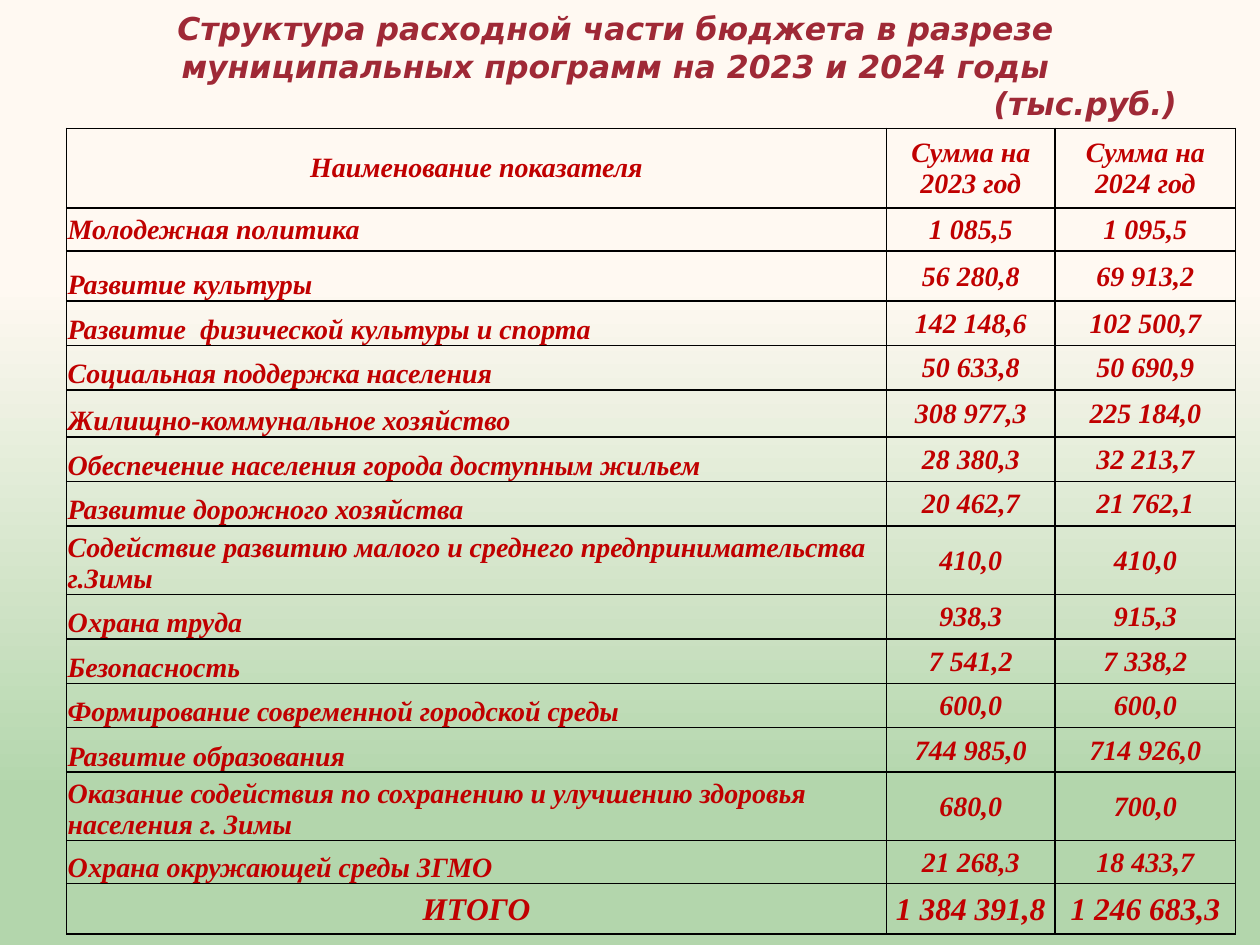
"""Build the slide with municipal programme spending for 2023 and 2024."""
from lxml.etree import SubElement
from pptx import Presentation
from pptx.dml.color import RGBColor
from pptx.enum.text import MSO_ANCHOR, PP_ALIGN
from pptx.oxml.ns import qn
from pptx.util import Pt

TITLE_COLOR = RGBColor(0x9F, 0x29, 0x36)
TABLE_COLOR = RGBColor(0xC0, 0x00, 0x00)
BORDER_COLOR = RGBColor(0x00, 0x00, 0x00)
GRADIENT = [(0.30, RGBColor(0xFF, 0xF9, 0xF2)), (0.84, RGBColor(0xB3, 0xD6, 0xAC))]

TITLE = [
    ("Структура расходной части бюджета в разрезе муниципальных программ на 2023 и 2024 годы",
     PP_ALIGN.CENTER),
    ("(тыс.руб.)", PP_ALIGN.RIGHT),
]
COLUMN_WIDTHS = [468.5, 96.5, 103]
ROWS = [
    (42.8, "Наименование показателя", "Сумма на 2023 год", "Сумма на 2024 год"),
    (24.6, "Молодежная политика", "1 085,5", "1 095,5"),
    (28.5, "Развитие культуры", "56 280,8", "69 913,2"),
    (25.4, "Развитие  физической культуры и спорта", "142 148,6", "102 500,7"),
    (25.4, "Социальная поддержка населения", "50 633,8", "50 690,9"),
    (27, "Жилищно-коммунальное хозяйство", "308 977,3", "225 184,0"),
    (25.4, "Обеспечение населения города доступным жильем", "28 380,3", "32 213,7"),
    (25.4, "Развитие дорожного хозяйства", "20 462,7", "21 762,1"),
    (36.3, "Содействие развитию малого и среднего предпринимательства г.Зимы", "410,0", "410,0"),
    (25.4, "Охрана труда", "938,3", "915,3"),
    (25.4, "Безопасность", "7 541,2", "7 338,2"),
    (25.4, "Формирование современной городской среды", "600,0", "600,0"),
    (25.4, "Развитие образования", "744 985,0", "714 926,0"),
    (36.3, "Оказание содействия по сохранению и улучшению здоровья населения г. Зимы",
     "680,0", "700,0"),
    (24.6, "Охрана окружающей среды ЗГМО", "21 268,3", "18 433,7"),
    (28.6, "ИТОГО", "1 384 391,8", "1 246 683,3"),
]
LAST_ROW = len(ROWS) - 1


def format_runs(para, font_name, size, color):
    for span in para.runs:
        font = span.font
        font.name, font.size = font_name, Pt(size)
        font.bold = font.italic = True
        font.color.rgb = color


def add_borders(cell):
    properties = cell._tc.get_or_add_tcPr()
    for side in ("lnL", "lnR", "lnT", "lnB"):
        line = SubElement(properties, qn(f"a:{side}"), w=str(Pt(1)))
        fill = SubElement(line, qn("a:solidFill"))
        SubElement(fill, qn("a:srgbClr"), val=str(BORDER_COLOR))


def paint_background(page):
    fill = page.background.fill
    fill.gradient()
    fill.gradient_angle = 270
    for stop, (position, color) in zip(fill.gradient_stops, GRADIENT):
        stop.position = position
        stop.color.rgb = color


def add_title(page):
    box = page.shapes.add_textbox(Pt(17.3), Pt(29.5), Pt(668.9), Pt(43.9))
    frame = box.text_frame
    frame.word_wrap = True
    frame.vertical_anchor = MSO_ANCHOR.BOTTOM
    frame.margin_left = frame.margin_right = Pt(13.7)
    frame.text = "\n".join(text for text, _ in TITLE)
    for para, (_, alignment) in zip(frame.paragraphs, TITLE):
        para.alignment = alignment
        format_runs(para, "DejaVu Sans", 18, TITLE_COLOR)


def fill_cell(cell, text, row, column):
    cell.text_frame.text = text
    para = cell.text_frame.paragraphs[0]
    is_name = column == 0 and 0 < row < LAST_ROW
    para.alignment = PP_ALIGN.LEFT if is_name else PP_ALIGN.CENTER
    format_runs(para, "Times New Roman", 18 if row == LAST_ROW else 16, TABLE_COLOR)
    at_bottom = column == 0 and row > 1
    cell.vertical_anchor = MSO_ANCHOR.BOTTOM if at_bottom else MSO_ANCHOR.MIDDLE
    if is_name or (row > 0 and column > 0):
        cell.margin_left = cell.margin_right = cell.margin_top = Pt(0.7)
        cell.margin_bottom = Pt(0)
    add_borders(cell)
    cell.fill.background()


def add_budget_table(page):
    heights = [row[0] for row in ROWS]
    table = page.shapes.add_table(
        len(ROWS), len(COLUMN_WIDTHS), Pt(38), Pt(73.3),
        Pt(sum(COLUMN_WIDTHS)), Pt(sum(heights))).table
    table.first_row = table.horz_banding = False
    for column, width in zip(table.columns, COLUMN_WIDTHS):
        column.width = Pt(width)
    for row, (height, *texts) in enumerate(ROWS):
        table.rows[row].height = Pt(height)
        for column, text in enumerate(texts):
            fill_cell(table.cell(row, column), text, row, column)


def main():
    deck = Presentation()
    deck.slide_width, deck.slide_height = Pt(720), Pt(540)
    page = deck.slides.add_slide(deck.slide_layouts[6])
    paint_background(page)
    add_title(page)
    add_budget_table(page)
    deck.save("out.pptx")


if __name__ == "__main__":
    main()
